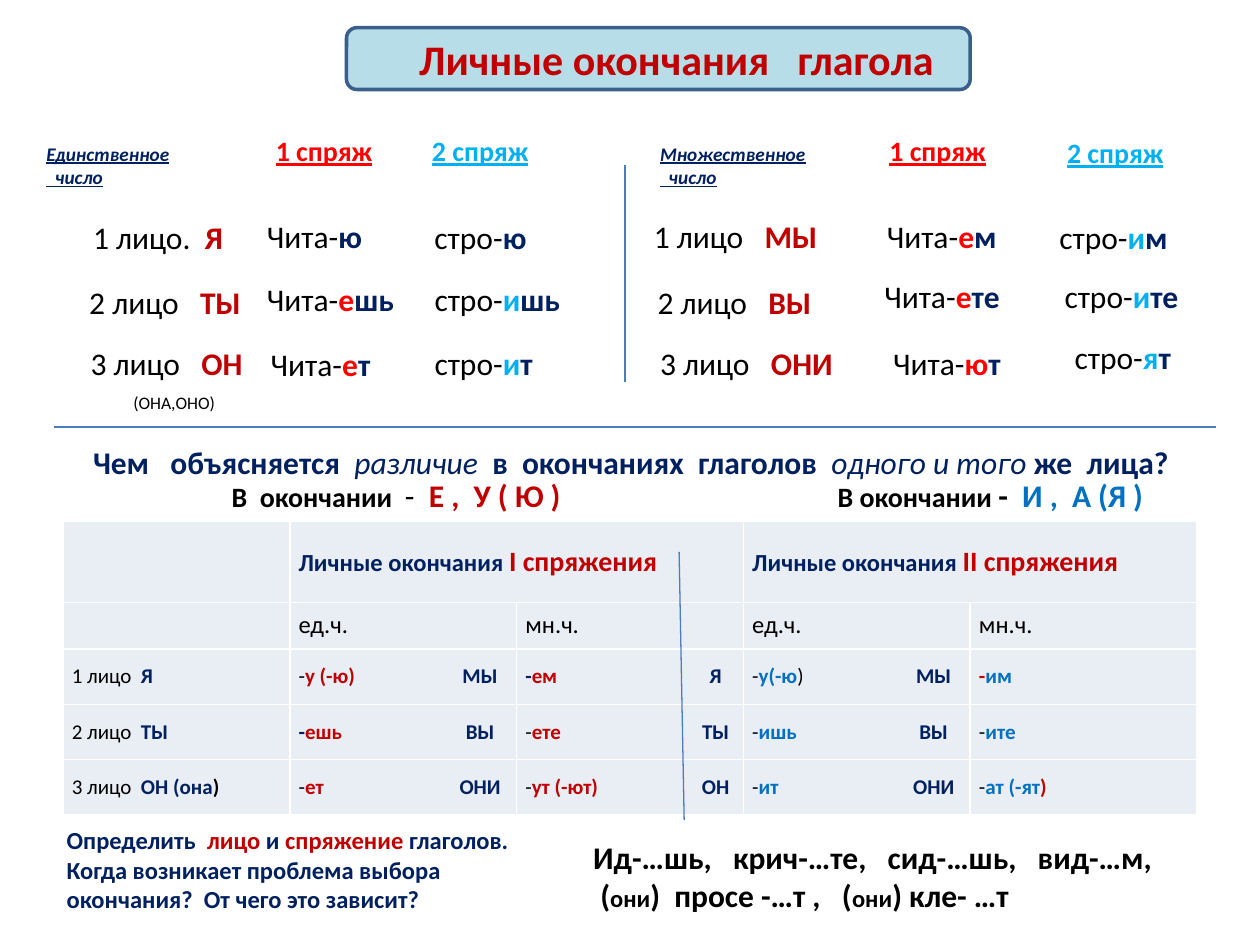
from collections import namedtuple
from dataclasses import dataclass

from lxml.etree import SubElement
from pptx import Presentation
from pptx.dml.color import RGBColor
from pptx.enum.shapes import MSO_CONNECTOR, MSO_SHAPE
from pptx.enum.text import MSO_ANCHOR, MSO_AUTO_SIZE, PP_ALIGN
from pptx.oxml.ns import qn
from pptx.util import Inches, Pt


@dataclass(frozen=True)
class Theme:
    font: str = "Calibri"
    black: str = "000000"
    navy: str = "002060"
    crimson: str = "C00000"
    red: str = "FF0000"
    sky: str = "00B0F0"
    blue: str = "0070C0"
    rule: str = "4B7EBC"
    banner: str = "B7DEE8"
    banner_line: str = "3A5F8C"
    cell: str = "E9EDF4"
    title: int = 24
    body: int = 18
    heading: int = 16
    note: int = 14
    ending: int = 12
    number: int = 11
    small: int = 10


T = Theme()
Box = namedtuple("Box", "left top width height")
Run = namedtuple("Run", "text color size bold italic underline",
                 defaults=(T.black, T.body, False, False, False))


def bold(text, color=T.black, size=T.body, **style):
    return Run(text, color, size, True, **style)


def inches(box):
    return [Inches(length) for length in box]


def write(paragraph, runs):
    for part in runs:
        run = paragraph.add_run()
        run.text = part.text
        font = run.font
        font.name, font.size = T.font, Pt(part.size)
        font.color.rgb = RGBColor.from_string(part.color)
        font.bold, font.italic, font.underline = part.bold, part.italic, part.underline


def add_text(slide, box, *lines, wrap=False):
    frame = slide.shapes.add_textbox(*inches(box)).text_frame
    frame.word_wrap = wrap
    frame.auto_size = MSO_AUTO_SIZE.SHAPE_TO_FIT_TEXT
    for index, runs in enumerate(lines):
        write(frame.add_paragraph() if index else frame.paragraphs[0], runs)
    return frame


def add_rule(slide, *ends):
    rule = slide.shapes.add_connector(MSO_CONNECTOR.STRAIGHT, *inches(ends))
    rule.line.color.rgb = RGBColor.from_string(T.rule)
    rule.line.width = Pt(0.75)
    SubElement(rule._element.spPr, qn("a:effectLst"))


def add_title(slide, box):
    banner = slide.shapes.add_shape(MSO_SHAPE.ROUNDED_RECTANGLE, *inches(box))
    banner.shadow.inherit = False
    banner.fill.solid()
    banner.fill.fore_color.rgb = RGBColor.from_string(T.banner)
    banner.line.color.rgb = RGBColor.from_string(T.banner_line)
    banner.line.width = Pt(2)

    title = slide.shapes.title
    title._element.addprevious(banner._element)
    title.left, title.top, title.width, title.height = inches(box)
    frame = title.text_frame
    frame.auto_size = MSO_AUTO_SIZE.NONE
    frame.vertical_anchor = MSO_ANCHOR.MIDDLE
    frame.margin_left = Inches(0.39)
    frame.margin_top = frame.margin_bottom = 0
    frame.paragraphs[0].alignment = PP_ALIGN.CENTER
    write(frame.paragraphs[0], [bold("Личные окончания   глагола", T.crimson, T.title)])


def add_number_half(slide, box, number, headings, persons, verbs):
    """Place one grammatical number: its headings, persons and verb forms."""
    def place(left, top, width, height, *lines):
        return add_text(slide, Box(box.left + left, box.top + top, width, height), *lines)

    name, width = number
    place(0.1, 0.08, width, 0.47, *[
        [bold(line, T.navy, T.number, italic=True, underline=True)]
        for line in (name, "  число")])
    for label, color, (left, top) in zip(("1 спряж", "2 спряж"), (T.red, T.sky), headings):
        place(left, top, 0.98, 0.37, [bold(label, color, T.heading, underline=True)])
    for left, top, width, person, pronoun in persons:
        frame = place(left, top, width, 0.4, [Run(person), bold(pronoun, T.crimson)])
        if pronoun == "ОН":
            others = frame.add_paragraph()
            others.space_before = Pt(6)
            others._p.get_or_add_pPr().set("marL", str(Inches(0.34)))
            write(others, [Run("(ОНА,ОНО)", size=T.small)])
    for left, top, width, stem, vowel, ending in verbs:
        vowel_color = T.red if stem == "Чита-" else T.sky
        runs = [Run(stem), bold(vowel, vowel_color), bold(ending, T.navy)]
        place(left, top, width, 0.4, [run for run in runs if run.text])


def add_endings_table(slide, box):
    def small(text, color=T.black):
        return Run(text, color, T.ending)

    def strong(text, color=T.navy):
        return bold(text, color, T.ending)

    def ending(text, color, pronoun="", dash=small("-")):
        return [dash, strong(text, color)] + ([strong("\t" + pronoun)] if pronoun else [])

    def conjugation(numeral):
        return [bold("Личные окончания ", T.navy, T.note),
                bold(f"{numeral} спряжения", T.crimson, T.heading)]

    numbers = [[Run(label, size=T.note)] for label in ("ед.ч.", "мн.ч.")]
    rows = [
        [[], conjugation("I"), [], conjugation("II"), []],
        [[], *numbers, *numbers],
        [[small("1 лицо  "), strong("Я")],
         ending("у (-ю)", T.crimson, "МЫ"),
         ending("ем", T.crimson, "Я", strong("-")),
         [small("-"), strong("у(-ю", T.blue), small(")"), strong("\tМЫ")],
         ending("им", T.blue, dash=strong("-", T.crimson))],
        [[small("2 лицо  "), strong("ТЫ")],
         ending("ешь", T.crimson, "ВЫ", strong("-")),
         ending("ете", T.crimson, "ТЫ"),
         ending("ишь", T.blue, "ВЫ"),
         ending("ите", T.blue)],
        [[small("3 лицо  "), strong("ОН (она"), strong(")", T.black)],
         ending("ет", T.crimson, "ОНИ"),
         ending("ут (-ют)", T.crimson, "ОН"),
         ending("ит", T.blue, "ОНИ"),
         ending("ат (-ят", T.blue) + [strong(")", T.crimson)]],
    ]
    table = slide.shapes.add_table(len(rows), len(rows[0]), *inches(box)).table
    table.first_row = table.horz_banding = False
    for column in table.columns:
        column.width = Inches(box.width / len(rows[0]))
    for row, height in zip(table.rows, (0.64, 0.37, 0.44, 0.44, 0.44)):
        row.height = Inches(height)
    for first in (1, 3):
        table.cell(0, first).merge(table.cell(0, first + 1))
    for row_index, row in enumerate(rows):
        for column_index, runs in enumerate(row):
            cell = table.cell(row_index, column_index)
            cell.fill.solid()
            cell.fill.fore_color.rgb = RGBColor.from_string(T.cell)
            cell.vertical_anchor = MSO_ANCHOR.MIDDLE
            cell.margin_left = cell.margin_right = Inches(0.07)
            cell.margin_top = cell.margin_bottom = Inches(0.02)
            paragraph = cell.text_frame.paragraphs[0]
            if any("\t" in run.text for run in runs):
                tabs = SubElement(paragraph._p.get_or_add_pPr(), qn("a:tabLst"))
                stop = 1.51 if column_index == 2 else 1.44
                SubElement(tabs, qn("a:tab"), pos=str(Inches(stop)), algn="ctr")
            write(paragraph, runs)


def add_question(slide, box):
    def plain(text):
        return Run(text, T.navy, italic=True)

    add_text(slide, box, [
        bold("Чем   объясняется  ", T.navy), plain("различие"),
        bold("  в  окончаниях  глаголов  ", T.navy), plain("одного и того "),
        bold("же  лица?", T.navy)])
    top = box.top + 0.26
    add_text(slide, Box(1.74, top, 2.85, 0.4), [
        bold("В  окончании  ", size=T.heading), Run("-  "), bold("Е ,  У ( Ю )", T.crimson)])
    add_text(slide, Box(6.55, top, 2.66, 0.4), [
        bold("В окончании ", size=T.heading), bold("-  "), bold("И ,  А (Я )", T.blue)])


def add_exercise(slide, task_box, words_box):
    they = bold("они", size=T.note)
    add_text(slide, words_box,
             [bold("Ид-…шь,   крич-…те,   сид-…шь,   вид-…м,")],
             [bold(" ("), they, bold(")  просе -…т ,   ("), they, bold(") кле- …т")])
    task = (("Определить  ", T.navy), ("лицо ", T.crimson), ("и", T.navy),
            (" спряжение ", T.crimson), ("глаголов.", T.navy))
    add_text(slide, task_box,
             [bold(text, color, T.note) for text, color in task],
             [bold("Когда возникает проблема выбора  окончания?  От чего это зависит?",
                   T.navy, T.note)], wrap=True)


def main():
    deck = Presentation()
    deck.slide_width, deck.slide_height = Inches(10), Inches(7.5)
    slide = deck.slides.add_slide(deck.slide_layouts[5])
    add_title(slide, Box(2.75, 0.22, 4.95, 0.49))
    add_number_half(
        slide, Box(0.17, 1, 4.7, 2.4), ("Единственное", 1.19), [(1.92, 0.01), (3.16, 0.01)],
        [(0.47, 0.68, 1.24, "1 лицо.  ", "Я"), (0.44, 1.2, 1.41, "2 лицо   ", "ТЫ"),
         (0.45, 1.68, 1.42, "3 лицо   ", "ОН")],
        [(1.85, 0.67, 0.96, "Чита-", "", "ю"), (3.18, 0.68, 0.93, "стро-", "", "ю"),
         (1.85, 1.17, 1.22, "Чита-", "е", "шь"), (3.18, 1.17, 1.21, "стро-", "и", "шь"),
         (1.88, 1.69, 1, "Чита-", "е", "т"), (3.18, 1.68, 0.98, "стро-", "и", "т")])
    add_number_half(
        slide, Box(5.04, 1, 4.7, 2.4), ("Множественное", 1.37), [(1.92, 0.01), (3.33, 0.03)],
        [(0.05, 0.67, 1.52, "1 лицо   ", "МЫ"), (0.08, 1.2, 1.55, "2 лицо   ", "ВЫ"),
         (0.1, 1.68, 1.59, "3 лицо   ", "ОНИ")],
        [(1.9, 0.67, 1.07, "Чита-", "е", "м"), (3.27, 0.68, 1.07, "стро-", "и", "м"),
         (1.88, 1.15, 1.12, "Чита-", "е", "те"), (3.31, 1.15, 1.11, "стро-", "и", "те"),
         (1.95, 1.68, 1.05, "Чита-", "ю", "т"), (3.39, 1.63, 0.97, "стро-", "я", "т")])
    add_rule(slide, 4.96, 3.03, 4.96, 1.31)
    add_rule(slide, 0.43, 3.39, 9.65, 3.39)
    add_question(slide, Box(0.64, 3.47, 8.77, 0.4))
    add_endings_table(slide, Box(0.5, 4.14, 9, 2.33))
    add_rule(slide, 5.39, 4.38, 5.43, 6.51)
    add_exercise(slide, Box(0.43, 6.5, 3.88, 0.81), Box(4.61, 6.6, 4.8, 0.71))
    deck.save("out.pptx")


if __name__ == "__main__":
    main()
